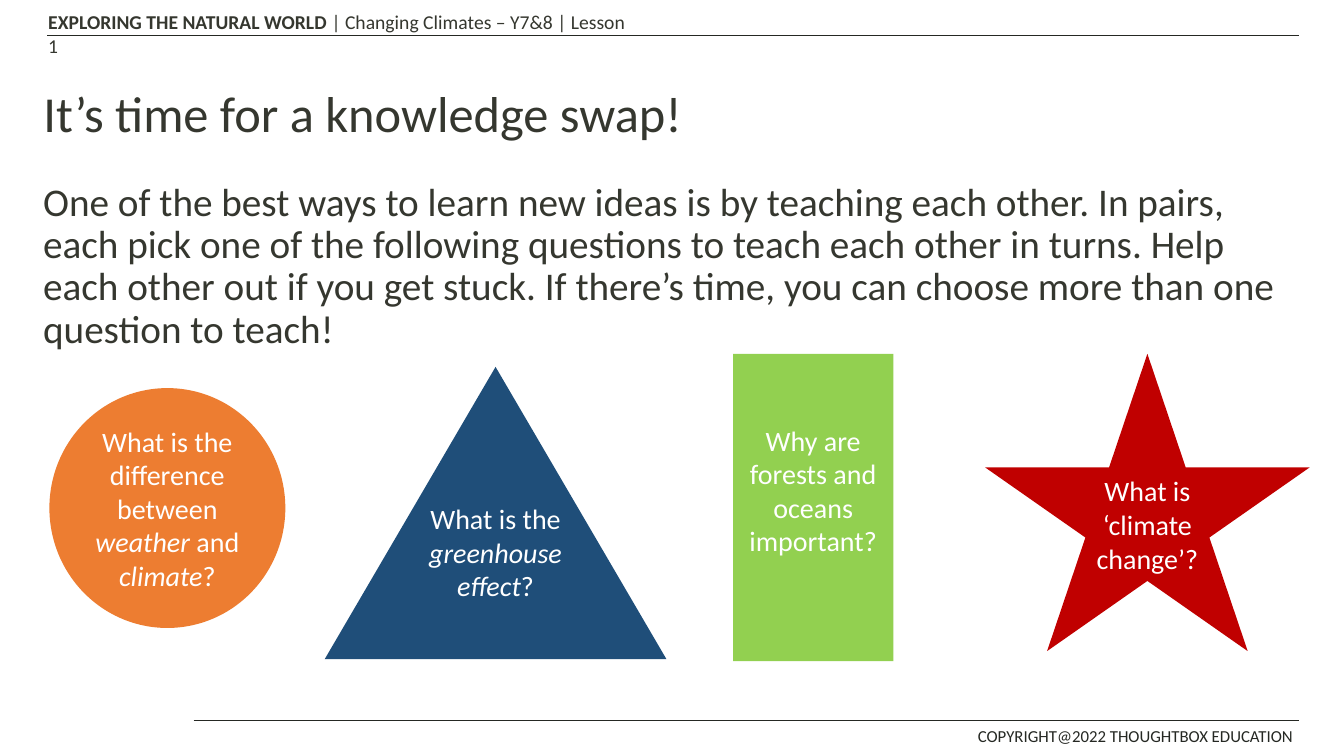
from pptx import Presentation
from pptx.dml.color import RGBColor
from pptx.enum.shapes import MSO_CONNECTOR, MSO_SHAPE
from pptx.enum.text import MSO_ANCHOR, PP_ALIGN
from pptx.util import Inches, Pt
from lxml import etree

STRAIGHT = MSO_CONNECTOR.STRAIGHT
TOP, MIDDLE = MSO_ANCHOR.TOP, MSO_ANCHOR.MIDDLE
LEFT, CENTER = PP_ALIGN.LEFT, PP_ALIGN.CENTER
TITLE_ONLY = 5
FONT = "Calibri"
DRAWING_NS = "http://schemas.openxmlformats.org/drawingml/2006/main"
COLORS = {
    "text": "35372F",
    "rule": "252823",
    "white": "FFFFFF",
    "orange": "ED7D31",
    "navy": "1F4E79",
    "red": "C00000",
    "green": "92D050",
}
QUESTION_SIZE = 20
QUESTION_LINE = 0.34  # inches taken by one line of question text

# Shape, box, colour, runs as (text, italic), lines the text is raised by
QUESTIONS = [
    (MSO_SHAPE.OVAL, (0.49, 3.85, 2.34, 2.38), "orange",
     [("What is the difference between ", False), ("weather", True),
      (" and ", False), ("climate", True), ("?", False)], 0),
    (MSO_SHAPE.ISOSCELES_TRIANGLE, (3.22, 3.64, 3.39, 2.9), "navy",
     [("What is the ", False), ("greenhouse effect", True), ("?", False)], 2),
    (MSO_SHAPE.STAR_5_POINT, (9.77, 3.51, 3.22, 2.95), "red",
     [("What is ‘climate change’?", False)], 0),
    (MSO_SHAPE.RECTANGLE, (7.27, 3.51, 1.59, 3.05), "green",
     [("Why are forests and oceans important?", False)], 1),
]


def color(name):
    return RGBColor.from_string(COLORS[name])


def place(shape, box):
    shape.left, shape.top, shape.width, shape.height = map(Inches, box)


def write(shape, runs, size, color_name, anchor=TOP, align=LEFT, spacing=1.0):
    """Fill a shape with one paragraph of (text, bold, italic) runs."""
    frame = shape.text_frame
    frame.word_wrap = True
    frame.vertical_anchor = anchor
    paragraph = frame.paragraphs[0]
    paragraph.alignment = align
    paragraph.line_spacing = spacing
    for text, bold, italic in runs:
        run = paragraph.add_run()
        run.text = text
        run.font.name = FONT
        run.font.size = Pt(size)
        run.font.bold = bold
        run.font.italic = italic
        run.font.color.rgb = color(color_name)


def add_text(slide, box, runs, size, color_name, spacing=1.0):
    shape = slide.shapes.add_textbox(*map(Inches, box))
    write(shape, runs, size, color_name, spacing=spacing)


def add_rule(slide, left, right, top):
    line = slide.shapes.add_connector(
        STRAIGHT, Inches(left), Inches(top), Inches(right), Inches(top))
    line.line.color.rgb = color("rule")
    line.line.width = Pt(1)
    etree.SubElement(line._element.spPr, f"{{{DRAWING_NS}}}effectLst")


def add_header(slide, left, top, right):
    add_rule(slide, left + 0.09, right, top + 0.3)
    add_text(slide, (left, top, 5.98, 0.34),
             [("EXPLORING THE NATURAL WORLD ", True, False),
              ("| Changing Climates – Y7&8 | Lesson 1", False, False)],
             14, "text")


def add_footer(slide, left, top, right):
    add_rule(slide, left, right, top)
    add_text(slide, (right - 3.28, top, 3.4, 0.31),
             [("COPYRIGHT@2022 THOUGHTBOX EDUCATION", False, False)],
             12, "rule")


def add_introduction(slide, left, top, width):
    title = slide.shapes.title
    place(title, (left, top, width, 1.3))
    write(title, [("It’s time for a knowledge swap!", False, False)],
          36, "text", anchor=MIDDLE, spacing=0.9)
    instructions = (
        "One of the best ways to learn new ideas is by teaching each other. "
        "In pairs, each pick one of the following questions to teach each "
        "other in turns. Help each other out if you get stuck. If there’s "
        "time, you can choose more than one question to teach!")
    add_text(slide, (left, top + 1.26, width, 4.76),
             [(instructions, False, False)], 28, "text", spacing=0.9)


def add_question(slide, kind, box, fill, runs, raised_lines):
    shape = slide.shapes.add_shape(kind, *map(Inches, box))
    shape.shadow.inherit = False
    shape.fill.solid()
    shape.fill.fore_color.rgb = color(fill)
    shape.line.fill.background()
    shape.text_frame.margin_bottom = Inches(0.05 + raised_lines * QUESTION_LINE)
    write(shape, [(text, False, italic) for text, italic in runs],
          QUESTION_SIZE, "white", anchor=MIDDLE, align=CENTER)


def main():
    presentation = Presentation()
    presentation.slide_width = Inches(13.33)
    presentation.slide_height = Inches(7.5)
    slide = presentation.slides.add_slide(
        presentation.slide_layouts[TITLE_ONLY])
    add_header(slide, 0.38, 0.05, 12.88)
    add_footer(slide, 1.92, 7.15, 12.88)
    add_introduction(slide, 0.33, 0.5, 12.54)
    for question in QUESTIONS:
        add_question(slide, *question)
    presentation.save("out.pptx")


if __name__ == "__main__":
    main()
